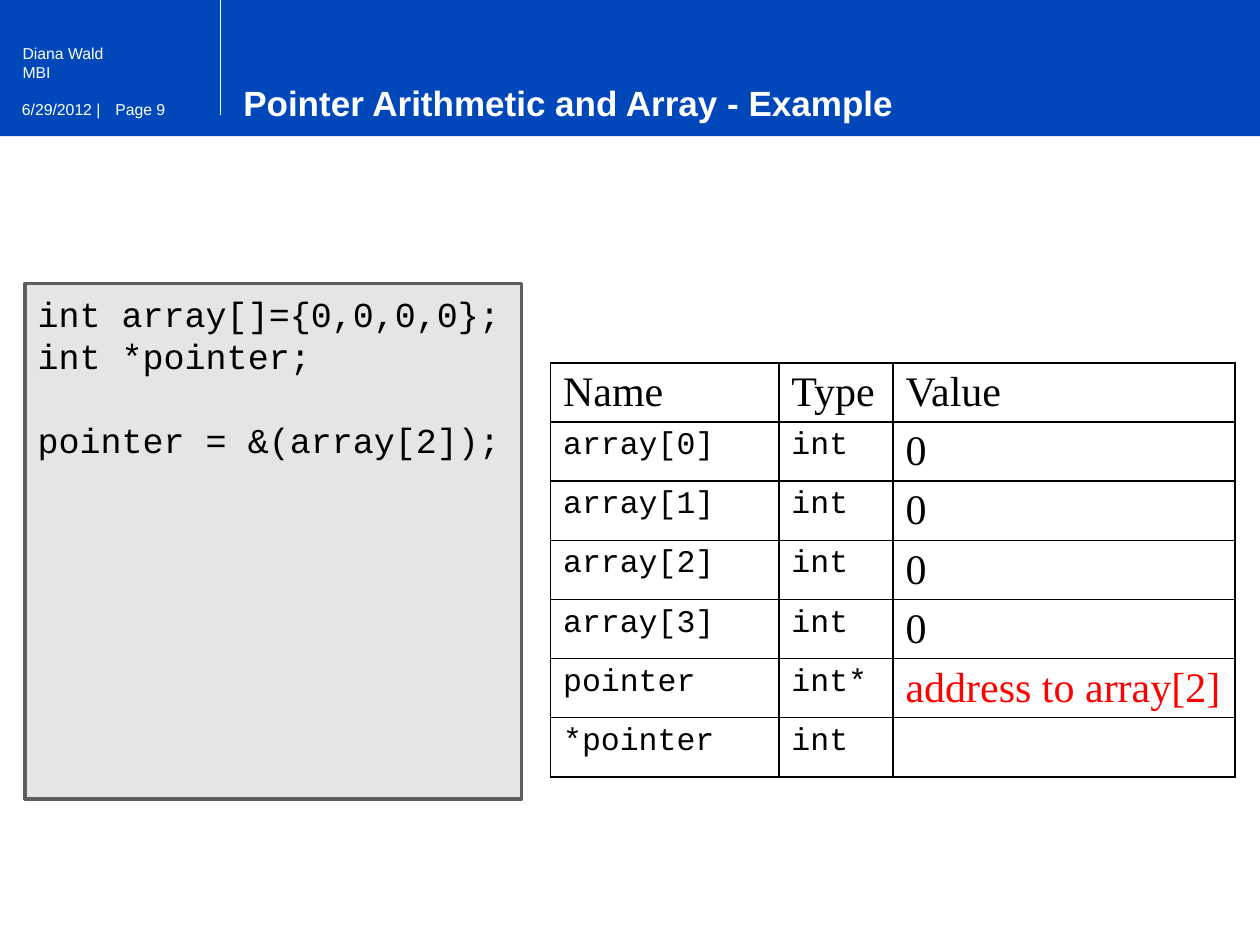
"""Build the slide on pointer arithmetic and arrays."""
from lxml.etree import SubElement
from pptx import Presentation
from pptx.dml.color import RGBColor
from pptx.enum.shapes import MSO_CONNECTOR as CONNECTOR, MSO_SHAPE as SHAPE
from pptx.enum.text import MSO_ANCHOR as ANCHOR, PP_ALIGN as ALIGN
from pptx.oxml.ns import qn
from pptx.util import Pt

rgb = RGBColor.from_string


def write(paragraph, text, font, size, color, bold=False):
    """Add one formatted run to a left-aligned paragraph."""
    paragraph.alignment = ALIGN.LEFT
    run = paragraph.add_run()
    run.text = text
    run.font.name, run.font.size, run.font.bold = font, Pt(size), bold
    run.font.color.rgb = rgb(color)


def block(left, top, width, height, fill):
    """Add a plain filled rectangle without outline or shadow."""
    box = slide.shapes.add_shape(SHAPE.RECTANGLE, Pt(left), Pt(top), Pt(width), Pt(height))
    box.shadow.inherit = False
    box.fill.solid()
    box.fill.fore_color.rgb = rgb(fill)
    box.line.fill.background()
    return box


prs = Presentation()
prs.slide_width, prs.slide_height = Pt(720), Pt(540)
slide = prs.slides.add_slide(prs.slide_layouts[5])
slide.background.fill.solid()
slide.background.fill.fore_color.rgb = rgb("CCDBF1")

block(0, 77.8, 720, 462.2, "FFFFFF")
block(0, 0, 720, 77.8, "0047B9")

divider = slide.shapes.add_connector(CONNECTOR.STRAIGHT, Pt(126), Pt(66), Pt(126), Pt(0))
divider.line.color.rgb = rgb("FFFFFF")
divider.line.width = Pt(0.9)
SubElement(divider._element.spPr, qn("a:effectLst"))

for label, left, top, width, height in (
    ("Page 9", 58.8, 53.3, 72.7, 36),
    ("6/29/2012 |", 5.5, 53.3, 66, 28.8),
    ("Diana Wald", 5.8, 21.6, 134.6, 18),
    ("MBI", 5.8, 32.4, 95.8, 18),
):
    frame = slide.shapes.add_textbox(Pt(left), Pt(top), Pt(width), Pt(height)).text_frame
    frame.word_wrap = True
    write(frame.paragraphs[0], label, "Arial", 9, "FFFFFF")

title = slide.shapes.title
title.left, title.top, title.width, title.height = Pt(131.8), Pt(43.2), Pt(444.2), Pt(31)
title.text_frame.vertical_anchor = ANCHOR.MIDDLE
write(title.text_frame.paragraphs[0], "Pointer Arithmetic and Array - Example",
      "Arial", 20, "FFFFFF", True)
slide.shapes._spTree.append(title._element)

code = block(14.4, 162, 283.7, 294.5, "E5E5E5")
code.line.color.rgb = rgb("5D5D5D")
code.line.width = Pt(2)
listing = code.text_frame
listing.word_wrap = True
listing.vertical_anchor = ANCHOR.TOP
listing.margin_top = Pt(5)
for i, (statement, gap) in enumerate((
    ("int array[]={0,0,0,0};", 0),
    ("int *pointer;", 0),
    ("pointer = &(array[2]);", 24),
)):
    line = listing.add_paragraph() if i else listing.paragraphs[0]
    line.line_spacing = Pt(24)
    if gap:
        line.space_before = Pt(gap)
    write(line, statement, "Courier New", 20, "000000")

variables = [("Name", "Type", "Value")]
variables += [(f"array[{i}]", "int", "0") for i in range(4)]
variables += [("pointer", "int*", "address to array[2]"), ("*pointer", "int", "")]

row_height = 33.8
memory = slide.shapes.add_table(len(variables), 3, Pt(314.6), Pt(207.4), Pt(391.2),
                                Pt(row_height * len(variables))).table
memory.first_row = memory.horz_banding = False
for column, width in zip(memory.columns, (130.5, 65.2, 195.5)):
    column.width = Pt(width)
for r, entries in enumerate(variables):
    memory.rows[r].height = Pt(row_height)
    for c, entry in enumerate(entries):
        cell = memory.cell(r, c)
        for side in ("lnL", "lnR", "lnT", "lnB"):
            border = SubElement(cell._tc.get_or_add_tcPr(), qn(f"a:{side}"), w=str(Pt(1)))
            SubElement(SubElement(border, qn("a:solidFill")), qn("a:srgbClr"), val="000000")
        cell.fill.background()
        font, size = ("Times New Roman", 24) if r == 0 or c == 2 else ("Courier New", 18)
        color = "FF0000" if entry.startswith("address") else "000000"
        if entry:
            write(cell.text_frame.paragraphs[0], entry, font, size, color)

prs.save("out.pptx")
